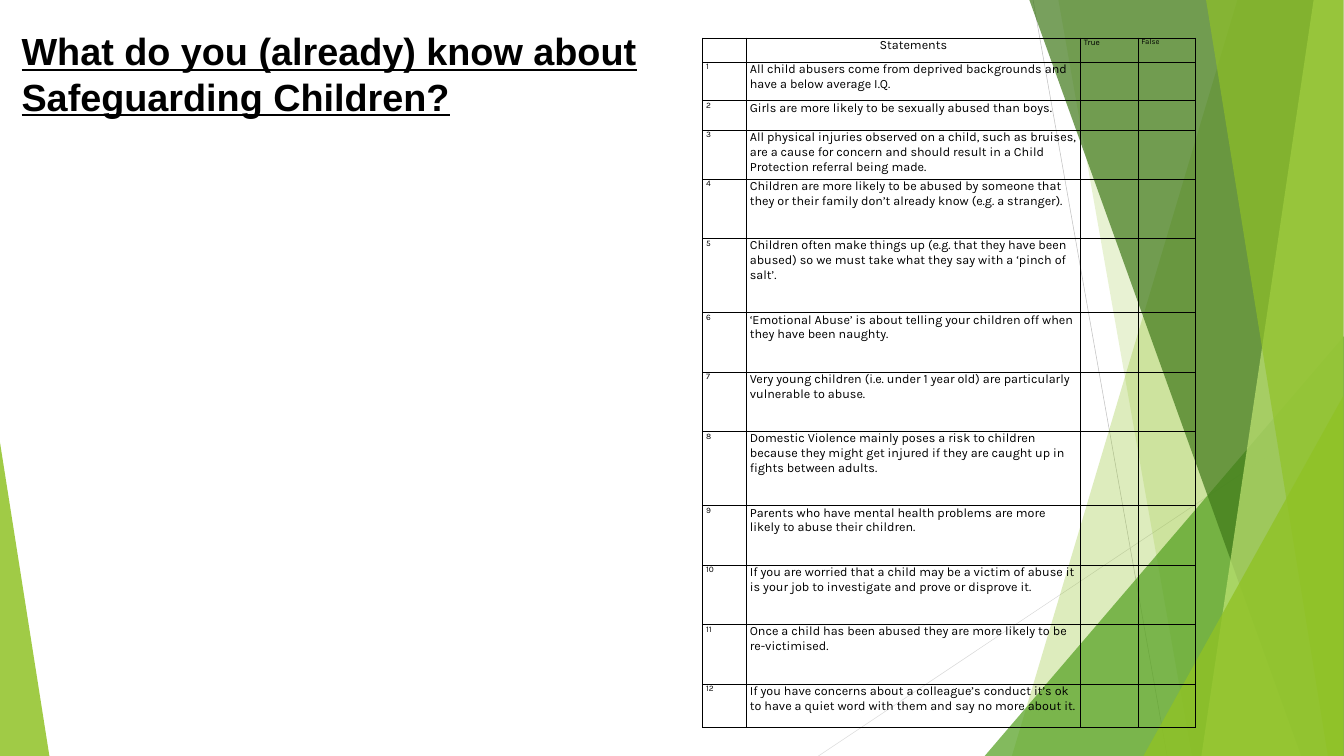
"""Build the safeguarding true-or-false quiz slide."""
from dataclasses import dataclass

import pptx
import pptx.dml.color
import pptx.enum.shapes
import pptx.enum.text
import pptx.oxml
import pptx.oxml.ns
import pptx.util
from pptx.util import Inches

BLACK = "000000"
LIME = "90C226"
ALIGN = pptx.enum.text.PP_ALIGN
KINDS = pptx.enum.shapes.MSO_SHAPE


@dataclass
class Ray:
    start: tuple[float, float]
    end: tuple[float, float]
    hue: str


@dataclass
class Shard:
    points: list[tuple[float, float]]
    hue: str
    alpha: int


@dataclass
class Wedge:
    box: tuple[float, float, float, float]
    apex: float
    hue: str
    alpha: int


@dataclass
class Entry:
    text: str
    height: float


RAYS = [
    Ray((20.5, 0), (23.16, 15), "BFBFBF"),
    Ray((26.66, 8.05), (16.24, 15), "D9D9D9"),
]


def shard(top: float, base: float, hue: str, alpha: int) -> Shard:
    """Describe a band from a slanted left edge to the slide's right edge."""
    return Shard([(top, -0.02), (26.66, -0.02), (26.66, 15), (base, 15)], hue, alpha)


FACETS = [
    shard(24.56, 20.08, LIME, 30),
    shard(21, 23.65, LIME, 20),
    Wedge((19.54, 6.67, 7.13, 8.33), 1, "54A021", 72),
    shard(20.42, 25.82, "3F7819", 70),
    shard(26.07, 23.84, "C0E474", 70),
    shard(23.93, 26.35, LIME, 65),
    Wedge((22.69, 7.85, 3.97, 7.15), 1, LIME, 80),
    Wedge((0, 8.78, 0.98, 6.22), 0, LIME, 85),
]

WIDTHS = [0.87, 6.63, 1.14, 1.14]
HEAD = 0.48
ENTRIES = [
    Entry("All child abusers come from deprived backgrounds and have a below average I.Q.", 0.77),
    Entry("Girls are more likely to be sexually abused than boys.", 0.58),
    Entry("All physical injuries observed on a child, such as bruises, are a cause for concern "
          "and should result in a Child Protection referral being made.", 0.97),
    Entry("Children are more likely to be abused by someone that they or their family don’t "
          "already know (e.g. a stranger).", 1.18),
    Entry("Children often make things up (e.g. that they have been abused) so we must take "
          "what they say with a ‘pinch of salt’.", 1.47),
    Entry("‘Emotional Abuse’ is about telling your children off when they have been naughty.", 1.18),
    Entry("Very young children (i.e. under 1 year old) are particularly vulnerable to abuse.", 1.18),
    Entry("Domestic Violence mainly poses a risk to children because they might get injured "
          "if they are caught up in fights between adults.", 1.47),
    Entry("Parents who have mental health problems are more likely to abuse their children.", 1.18),
    Entry("If you are worried that a child may be a victim of abuse it is your job to "
          "investigate and prove or disprove it.", 1.18),
    Entry("Once a child has been abused they are more likely to be re-victimised.", 1.18),
    Entry("If you have concerns about a colleague’s conduct it’s ok to have a quiet word with "
          "them and say no more about it.", 0.87),
]


def tint(hue: str) -> pptx.dml.color.RGBColor:
    """Turn a hex string into a colour."""
    return pptx.dml.color.RGBColor.from_string(hue)


def style(para, face: str, size: float) -> None:
    """Set a paragraph's font in black."""
    para.font.name = face
    para.font.size = pptx.util.Pt(size)
    para.font.color.rgb = tint(BLACK)


def draw_ray(slide, ray: Ray) -> None:
    """Draw a thin line without a shadow."""
    ends = [Inches(value) for value in (*ray.start, *ray.end)]
    line = slide.shapes.add_connector(pptx.enum.shapes.MSO_CONNECTOR.STRAIGHT, *ends)
    line.line.color.rgb = tint(ray.hue)
    line.line.width = pptx.util.Pt(0.75)
    pptx.oxml.ns.qn("a:effectLst")
    line._element.spPr.append(pptx.oxml.parse_xml(
        f'<a:effectLst {pptx.oxml.ns.nsdecls("a")}/>'))


def draw_facet(slide, facet: Shard | Wedge) -> None:
    """Draw one translucent shard or triangle."""
    if isinstance(facet, Wedge):
        shape = slide.shapes.add_shape(KINDS.ISOSCELES_TRIANGLE, *map(Inches, facet.box))
        shape.adjustments[0] = facet.apex
    else:
        first, *rest = [(Inches(x), Inches(y)) for x, y in facet.points]
        pen = slide.shapes.build_freeform(*first)
        pen.add_line_segments(rest)
        shape = pen.convert_to_shape()
    shape.shadow.inherit = False
    shape.line.fill.background()
    shape.fill.solid()
    shape.fill.fore_color.rgb = tint(facet.hue)
    color = shape._element.spPr.find(".//" + pptx.oxml.ns.qn("a:srgbClr"))
    color.append(pptx.oxml.parse_xml(
        f'<a:alpha {pptx.oxml.ns.nsdecls("a")} val="{facet.alpha * 1000}"/>'))


def fill_cell(cell, text: str, size: float, align=ALIGN.LEFT) -> None:
    """Write a clear cell with black borders."""
    cell.margin_left = cell.margin_right = Inches(0.07)
    cell.margin_top = cell.margin_bottom = 0
    cell.text = text
    para = cell.text_frame.paragraphs[0]
    para.alignment = align
    style(para, "Karla", size)
    props = cell._tc.get_or_add_tcPr()
    for side in ("lnL", "lnR", "lnT", "lnB"):
        props.append(pptx.oxml.parse_xml(
            f'<a:{side} {pptx.oxml.ns.nsdecls("a")} w="12700"><a:solidFill>'
            f'<a:srgbClr val="{BLACK}"/></a:solidFill></a:{side}>'))
    cell.fill.background()


def draw_quiz(slide) -> None:
    """Draw the table of statements."""
    heights = [HEAD, *(entry.height for entry in ENTRIES)]
    frame = slide.shapes.add_table(
        len(heights), len(WIDTHS), Inches(13.94), Inches(0.75),
        Inches(sum(WIDTHS)), Inches(sum(heights)))
    table = frame.table
    table.first_row = table.horz_banding = False
    for column, width in zip(table.columns, WIDTHS):
        column.width = Inches(width)
    for row, height in zip(table.rows, heights):
        row.height = Inches(height)
    titles = [("", 12), ("Statements", 18, ALIGN.CENTER), ("True", 12), ("False", 11)]
    rows = [titles] + [[(str(count), 12), (entry.text, 18), ("", 12), ("", 12)]
                       for count, entry in enumerate(ENTRIES, 1)]
    for row, items in zip(table.rows, rows):
        for cell, item in zip(row.cells, items):
            fill_cell(cell, *item)


def draw_title(slide) -> None:
    """Write the underlined heading."""
    box = slide.shapes.add_textbox(Inches(0.33), Inches(0.51), Inches(13.33), Inches(1.92))
    box.text_frame.word_wrap = True
    para = box.text_frame.paragraphs[0]
    para.text = "What do you (already) know about Safeguarding Children?"
    style(para, "Arial", 54)
    para.font.bold = para.font.underline = True


def main() -> None:
    """Assemble and save the slide."""
    deck = pptx.Presentation()
    deck.slide_width, deck.slide_height = Inches(26.67), Inches(15)
    slide = deck.slides.add_slide(deck.slide_layouts[6])
    for ray in RAYS:
        draw_ray(slide, ray)
    for facet in FACETS:
        draw_facet(slide, facet)
    draw_quiz(slide)
    draw_title(slide)
    deck.save("out.pptx")


if __name__ == "__main__":
    main()
